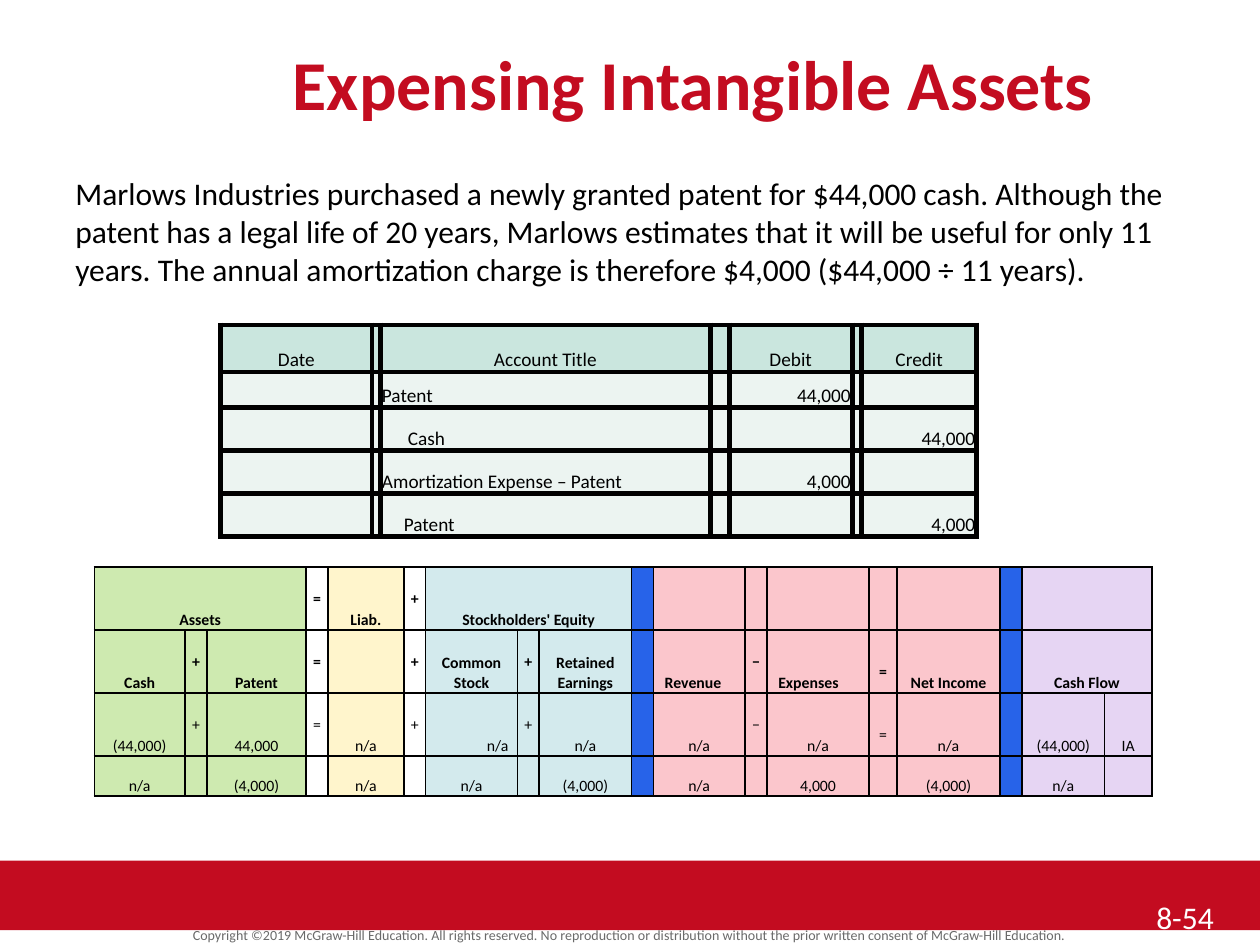
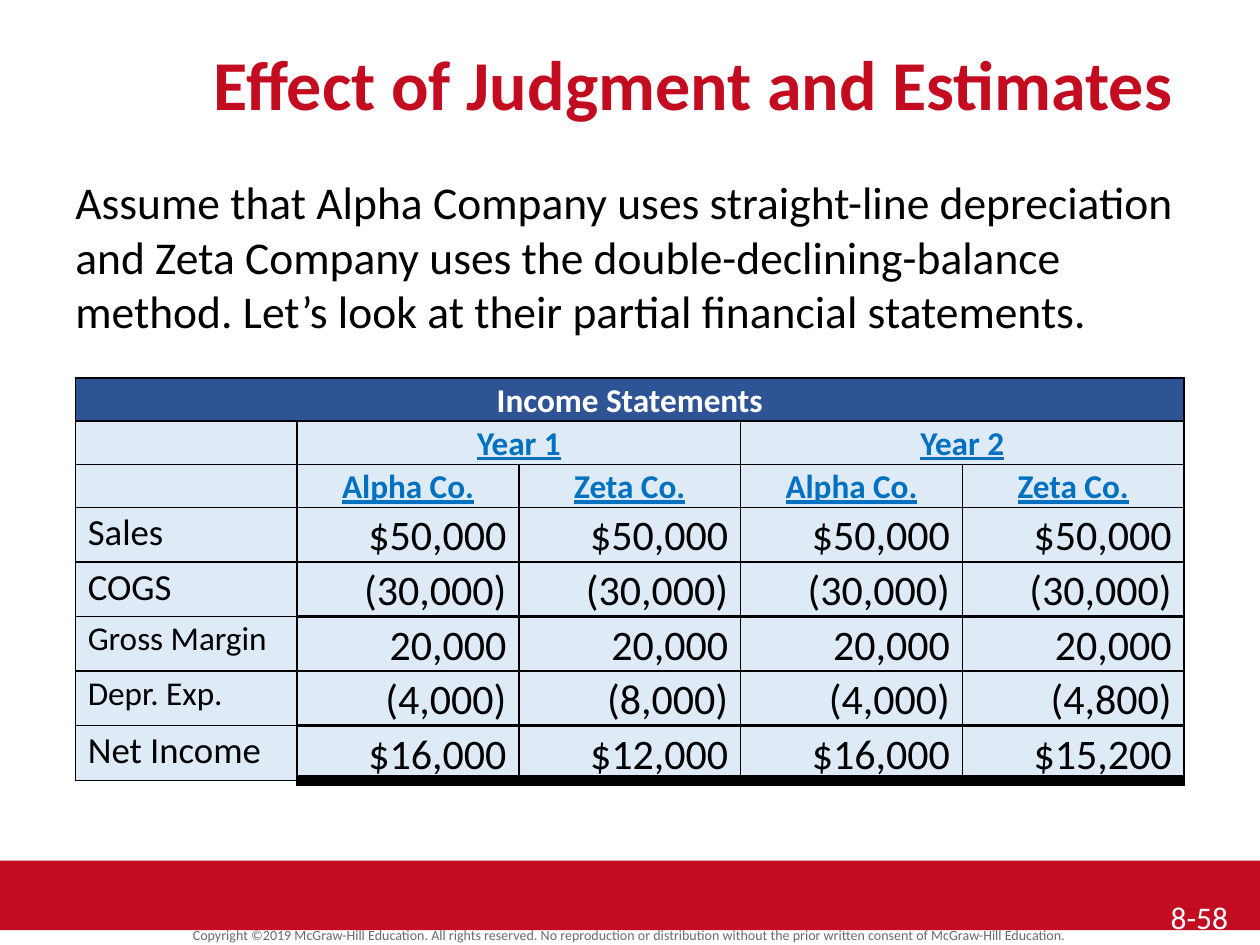
from lxml.etree import SubElement
from pptx import Presentation
from pptx.dml.color import RGBColor
from pptx.enum.shapes import MSO_SHAPE
from pptx.enum.text import MSO_ANCHOR, MSO_AUTO_SIZE, PP_ALIGN
from pptx.oxml.ns import qn
from pptx.util import Cm, Pt

COLORS = {
    "red": "C30C20", "gray": "6A6A6A", "black": "000000", "white": "FFFFFF",
    "green": "CEEAB0", "yellow": "FFF5CC", "aqua": "D3EAED", "blue": "2763E9",
    "pink": "FBC6CC", "lilac": "E6D5F3", "mint": "CAE6DE", "pale": "ECF4F1",
    "navy": "2F5496", "sky": "DEEAF6", "link": "0070C0",
}
FONT = "Calibri"
LEFT, CENTER, RIGHT = PP_ALIGN.LEFT, PP_ALIGN.CENTER, PP_ALIGN.RIGHT
NOTICE = ("Copyright ©2019 McGraw-Hill Education. All rights reserved. No reproduction or "
          "distribution without the prior written consent of McGraw-Hill Education.")


def rgb(name):
    return RGBColor.from_string(COLORS[name])


class Deck:
    def __init__(self):
        self.file = Presentation()
        self.file.slide_width, self.file.slide_height = Cm(25.4), Cm(19.05)
        self.slide = None

    def start(self, title, number, inset=0.25):
        """Add a slide with its title, band, copyright line and number."""
        self.slide = self.file.slides.add_slide(self.file.slide_layouts[5])
        self.band()
        self.text(NOTICE, (0, 18.64, 25.4, 0.48), 8, "gray", CENTER,
                  insets=(0, 0, 0, 0), anchor=MSO_ANCHOR.MIDDLE, space=0.8)
        self.title(title)
        self.text(number, (23.06, 17.98, 2.34, 1.07), 18, "white",
                  insets=(inset, 0.13, 0, 0.13))

    def band(self):
        band = self.slide.shapes.add_shape(
            MSO_SHAPE.RECTANGLE, Cm(0), Cm(17.35), Cm(25.4), Cm(1.4))
        band.shadow.inherit = False
        band.fill.solid()
        band.fill.fore_color.rgb = rgb("red")
        band.line.fill.background()

    def title(self, words):
        head = self.slide.shapes.title
        head.left, head.top, head.width, head.height = map(Cm, (2.54, 0.64, 22.86, 1.7))
        frame = head.text_frame
        frame.auto_size = MSO_AUTO_SIZE.NONE
        frame.vertical_anchor = MSO_ANCHOR.TOP
        frame.margin_top = Cm(0.18)
        self.style(frame, words, 40, "red", CENTER, bold=True)

    def text(self, words, place, size, color, align=LEFT,
             insets=(0.25, 0.13, 0.25, 0.13), anchor=MSO_ANCHOR.TOP, space=1.0):
        frame = self.slide.shapes.add_textbox(*map(Cm, place)).text_frame
        frame.word_wrap = True
        frame.vertical_anchor = anchor
        self.inset(frame, insets)
        self.style(frame, words, size, color, align, space=space)

    def inset(self, box, insets):
        box.margin_left, box.margin_top, box.margin_right, box.margin_bottom = map(Cm, insets)

    def style(self, frame, words, size, color, align, bold=False, under=False, space=1.0):
        frame.text = words
        par = frame.paragraphs[0]
        par.alignment = align
        par.line_spacing = space
        for run in par.runs:
            font = run.font
            font.name, font.size = FONT, Pt(size)
            font.bold, font.underline = bold, under
            font.color.rgb = rgb(color)
        if not words:
            SubElement(par._p, qn("a:endParaRPr"), sz=str(size * 100))

    def table(self, left, top, cols, rows):
        grid = self.slide.shapes.add_table(
            len(rows), len(cols), Cm(left), Cm(top), Cm(sum(cols)), Cm(sum(rows))).table
        grid.first_row = grid.horz_banding = False
        for col, width in zip(grid.columns, cols):
            col.width = Cm(width)
        for row, height in zip(grid.rows, rows):
            row.height = Cm(height)
        return grid

    def cell(self, cell, words, size, fill, align=CENTER, insets=(0, 0, 0, 0),
             anchor=MSO_ANCHOR.BOTTOM, edges=(1, 1, 1, 1), color="black", **look):
        """Fill one cell; edges are left, right, top and bottom widths in points."""
        self.inset(cell, insets)
        cell.vertical_anchor = anchor
        self.style(cell.text_frame, words, size, color, align, **look)
        if fill:
            cell.fill.solid()
            cell.fill.fore_color.rgb = rgb(fill)
        else:
            cell.fill.background()
        props = cell._tc.get_or_add_tcPr()
        for spot, (side, width) in enumerate(zip("LRTB", edges)):
            line = SubElement(props, qn("a:ln" + side), w=str(Pt(width)))
            paint = SubElement(line, qn("a:solidFill"))
            SubElement(paint, qn("a:srgbClr"), val=COLORS["black"])
            props.insert(spot, line)


def journal(deck):
    entries = [
        ("Date", "", "Account Title", "", "Debit", "", "Credit"),
        ("", "", "Patent", "", "44,000", "", ""),
        ("", "", "Cash", "", "", "", "44,000"),
        ("", "", "Amortization Expense – Patent", "", "4,000", "", ""),
        ("", "", "Patent", "", "", "", "4,000"),
    ]
    indents = {2: 0.55, 4: 0.47}
    grid = deck.table(4.45, 6.55, (3.05, 0.17, 6.65, 0.38, 2.48, 0.19, 2.32),
                      (0.95, 0.71, 0.87, 0.87, 0.87))
    for r, entry in enumerate(entries):
        for c, words in enumerate(entry):
            align = CENTER if r == 0 else LEFT if c == 2 else RIGHT
            indent = indents.get(r, 0.03) if c == 2 else 0.03
            deck.cell(grid.cell(r, c), words, 11, "pale" if r else "mint", align,
                      (indent, 0.03, 0.03, 0), edges=(3, 3, 3, 3))


def model(deck):
    """Show the effects on the accounting equation, income and cash flow."""
    fills = (["green"] * 3 + [None, "yellow", None] + ["aqua"] * 3 + ["blue"]
             + ["pink"] * 5 + ["blue"] + ["lilac"] * 2)
    slim = 0.44
    cols = (1.83, slim, 2, slim, 1.53, slim, 1.85, slim, 1.86, slim,
            1.85, slim, 2.06, 0.56, 2.08, slim, 1.67, 0.95)
    lines = [
        {0: "Assets", 3: "=", 4: "Liab.", 5: "+", 6: "Stockholders' Equity"},
        {0: "Cash", 1: "+", 2: "Patent", 3: "=", 5: "+", 6: "Common Stock", 7: "+",
         8: "Retained Earnings", 10: "Revenue", 11: "−", 12: "Expenses", 13: "=",
         14: "Net Income", 16: "Cash Flow"},
        {0: "(44,000)", 1: "+", 2: "44,000", 3: "=", 4: "n/a", 5: "+", 6: "n/a", 7: "+",
         8: "n/a", 10: "n/a", 11: "−", 12: "n/a", 13: "=", 14: "n/a",
         16: "(44,000)", 17: "IA"},
        {0: "n/a", 2: "(4,000)", 4: "n/a", 6: "n/a", 8: "(4,000)", 10: "n/a",
         12: "4,000", 14: "(4,000)", 16: "n/a"},
    ]
    aligns = {(1, 10): LEFT, (1, 12): LEFT, (2, 6): RIGHT}
    grid = deck.table(1.9, 11.43, cols, (1.27, 1.27, 1.27, 0.81))
    for r, first, last in ((0, 0, 2), (0, 6, 8), (0, 16, 17), (1, 16, 17)):
        grid.cell(r, first).merge(grid.cell(r, last))
    for r, line in enumerate(lines):
        for c, fill in enumerate(fills):
            words = line.get(c, "")
            align = aligns.get((r, c), CENTER)
            if words in ("+", "−", "="):
                insets = (0, 0, 0, 0.22 if c == 13 else 0.43)
            elif cols[c] == slim:
                insets = (0, 0, 0, 0)
            else:
                insets = (0.23 if align == LEFT else 0.18, 0, 0.18, 0)
            deck.cell(grid.cell(r, c), words, 9, fill, align, insets,
                      bold=r < 2, space=1.07)


def income(deck):
    firms = ("Alpha Co.", "Zeta Co.")
    rows = [
        ("Income Statements", "", "", "", ""),
        ("", "Year 1", "", "Year 2", ""),
        ("", *firms, *firms),
        ("Sales", *["$50,000"] * 4),
        ("COGS", *["(30,000)"] * 4),
        ("Gross Margin", *["20,000"] * 4),
        ("Depr. Exp.", "(4,000)", "(8,000)", "(4,000)", "(4,800)"),
        ("Net Income", "$16,000", "$12,000", "$16,000", "$15,200"),
    ]
    rules = {4: 2.25, 6: 2.25, 7: 6.75}
    grid = deck.table(1.52, 7.62, [4.47] * 5, [0.87] * 3 + [1.1] * 5)
    for r, first, last in ((0, 0, 4), (1, 1, 2), (1, 3, 4)):
        grid.cell(r, first).merge(grid.cell(r, last))
    for r, row in enumerate(rows):
        for c, words in enumerate(row):
            head = r < 3
            if head:
                size, align = 19, CENTER
            elif c:
                size, align = 24, RIGHT
            else:
                size, align = 19 if r in (5, 6) else 21, LEFT
            edges = (1, 1, rules.get(r - 1, 1), rules.get(r, 1)) if c else (1, 1, 1, 1)
            deck.cell(grid.cell(r, c), words, size, "sky" if r else "navy", align,
                      (0.25, 0, 0.25, 0), MSO_ANCHOR.TOP, edges,
                      color="white" if r == 0 else "link" if head else "black",
                      bold=head, under=r in (1, 2), space=1.07)


def main():
    deck = Deck()
    body = (1.27, 3.38, 22.86, 13.13)

    deck.start("Expensing Intangible Assets", "8-54")
    deck.text("Marlows Industries purchased a newly granted patent for $44,000 cash. Although "
              "the patent has a legal life of 20 years, Marlows estimates that it will be "
              "useful for only 11 years. The annual amortization charge is therefore $4,000 "
              "($44,000 ÷ 11 years).", body, 18, "black")
    model(deck)
    journal(deck)

    deck.start("Effect of Judgment and Estimates", "8-58", inset=0.54)
    deck.text("Assume that Alpha Company uses straight-line depreciation and Zeta Company uses "
              "the double-declining-balance method. Let’s look at their partial financial "
              "statements.", body, 26, "black")
    income(deck)

    deck.file.save("out.pptx")


if __name__ == "__main__":
    main()
